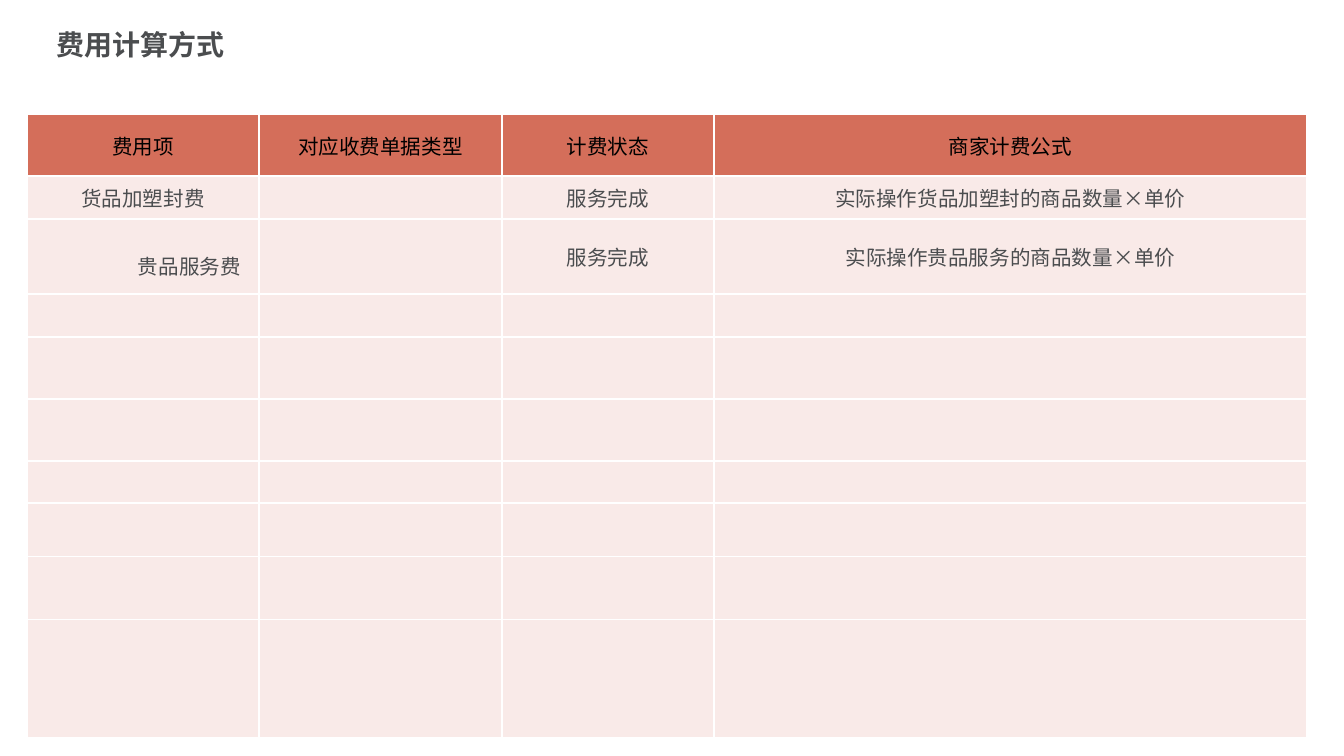
from pptx import Presentation, util as u
from pptx.dml.color import RGBColor
from pptx.enum import text
from pptx.oxml import parse_xml
from pptx.oxml.ns import nsdecls

PX_PER_INCH = 134.4
CJK_FONT = "Noto Sans CJK SC"
INK = "4B4D4F"
HEADER_FILL, BODY_FILL, RULE = "D46E5A", "F9EAE8", "FFFFFF"

COLUMN_WIDTHS = [232, 243, 212, 593]
ROW_HEIGHTS = [62, 43, 75, 43, 62, 62, 42, 54, 63, 118]
FEES = [
    ["费用项", "对应收费单据类型", "计费状态", "商家计费公式"],
    ["货品加塑封费", "", "服务完成", "实际操作货品加塑封的商品数量×单价"],
    ["贵品服务费", "", "服务完成", "实际操作贵品服务的商品数量×单价"],
]
CELL_MARGINS = {"margin_left": 1, "margin_right": 1, "margin_top": 1, "margin_bottom": 0}
# The premium service label sits low and to the right in its cell
SHIFTED_MARGINS = {**CELL_MARGINS, "margin_right": 18, "margin_top": 18}


def px(length):
    return u.Emu(round(length * 914400 / PX_PER_INCH))


def colour(hex_value):
    return RGBColor.from_string(hex_value)


def set_all(target, values):
    for name, value in values.items():
        setattr(target, name, value)


def write(paragraph, words, ink, font_format):
    run = paragraph.add_run()
    run.text = words
    set_all(run.font, font_format)
    run.font.color.rgb = colour(ink)
    run.font._element.append(parse_xml(
        f'<a:ea {nsdecls("a")} typeface="{CJK_FONT}"/>'))


def draw_borders(cell):
    properties = cell._tc.get_or_add_tcPr()
    for position, side in enumerate(("lnL", "lnR", "lnT", "lnB")):
        properties.insert(position, parse_xml(
            f'<a:{side} {nsdecls("a")} w="12700"><a:solidFill>'
            f'<a:srgbClr val="{RULE}"/></a:solidFill></a:{side}>'))


def add_title(slide, left, top, width, height):
    frame = slide.shapes.add_textbox(px(left), px(top), px(width), px(height)).text_frame
    set_all(frame, {"word_wrap": False, "margin_left": px(10), "margin_right": px(10),
                    "margin_top": px(5), "margin_bottom": px(5)})
    write(frame.paragraphs[0], "费用计算方式", INK,
          {"name": "Cabin", "size": u.Pt(15), "bold": True})


def fill_cell(cell, words, is_header, is_shifted):
    margins = SHIFTED_MARGINS if is_shifted else CELL_MARGINS
    set_all(cell, {side: px(size) for side, size in margins.items()})
    cell.vertical_anchor = text.MSO_ANCHOR.MIDDLE
    cell.fill.solid()
    cell.fill.fore_color.rgb = colour(HEADER_FILL if is_header else BODY_FILL)
    draw_borders(cell)

    paragraph = cell.text_frame.paragraphs[0]
    paragraph.alignment = text.PP_ALIGN.RIGHT if is_shifted else text.PP_ALIGN.CENTER
    if words:
        write(paragraph, words, "000000" if is_header else INK,
              {"name": CJK_FONT, "size": u.Pt(11), "bold": False})
    else:
        # A small line keeps empty rows from growing
        paragraph._p.append(parse_xml(f'<a:endParaRPr {nsdecls("a")} sz="1100"/>'))


def add_fee_table(slide, left, top):
    fee_table = slide.shapes.add_table(
        len(ROW_HEIGHTS), len(COLUMN_WIDTHS), px(left), px(top),
        px(sum(COLUMN_WIDTHS)), px(sum(ROW_HEIGHTS))).table
    set_all(fee_table, {"first_row": False, "horz_banding": False})
    for column, width in zip(fee_table.columns, COLUMN_WIDTHS):
        column.width = px(width)
    for row_index, height in enumerate(ROW_HEIGHTS):
        fee_table.rows[row_index].height = px(height)
        fee = FEES[row_index] if row_index < len(FEES) else [""] * len(COLUMN_WIDTHS)
        for column_index, words in enumerate(fee):
            fill_cell(fee_table.cell(row_index, column_index), words,
                      is_header=row_index == 0,
                      is_shifted=(row_index, column_index) == (2, 0))


def main():
    deck = Presentation()
    set_all(deck, {"slide_width": px(1344), "slide_height": px(756)})
    slide = deck.slides.add_slide(deck.slide_layouts[6])
    add_title(slide, 47, 23, 233, 44)
    add_fee_table(slide, 27, 114)
    deck.save("out.pptx")


if __name__ == "__main__":
    main()
